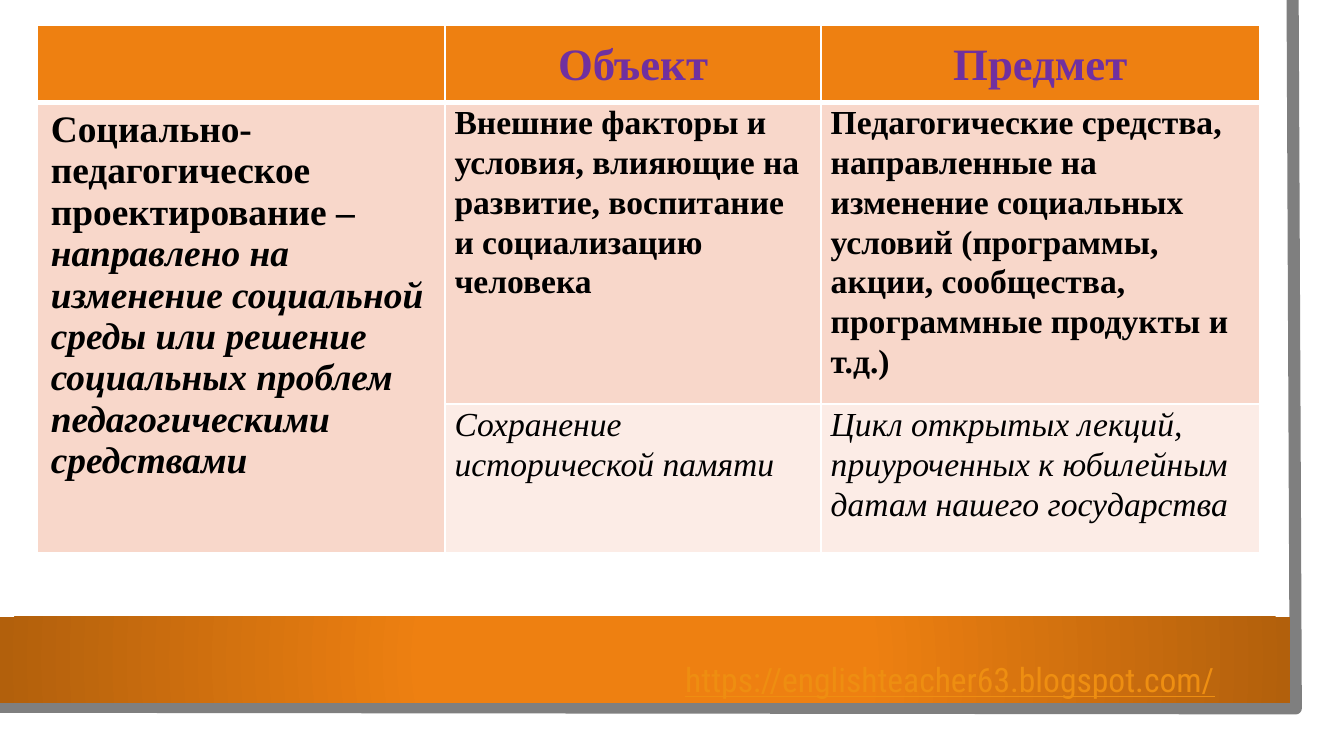
import pptx
import pptx.dml.color
import pptx.enum.text
import pptx.oxml
import pptx.oxml.ns
import pptx.util
from pptx.util import Cm

SERIF = "Times New Roman"
ORANGE, PINK, CREAM = "EE8011", "F8D7CA", "FCECE6"
HEADINGS = ["", "Объект", "Предмет"]
DEFINITION = [
    ("Социально-педагогическое проектирование – ", False),
    ("направлено на изменение социальной среды или решение социальных "
     "проблем педагогическими средствами", True),
]
GENERAL = [
    "Внешние факторы и условия, влияющие на развитие, воспитание и социализацию человека",
    "Педагогические средства, направленные на изменение социальных условий "
    "(программы, акции, сообщества, программные продукты и т.д.)",
]
EXAMPLES = [
    "Сохранение исторической памяти",
    "Цикл открытых лекций, приуроченных к юбилейным датам нашего государства",
]


def color(value):
    return pptx.dml.color.RGBColor.from_string(value)


def style(run, size, name, tint, bold=False, italic=False):
    run.font.size = pptx.util.Pt(size)
    run.font.name = name
    run.font.color.rgb = color(tint)
    run.font.bold = bold
    run.font.italic = italic


def set_margins(holder, side, end):
    holder.margin_left = holder.margin_right = Cm(side)
    holder.margin_top = holder.margin_bottom = Cm(end)


def add_frame_edge(slide):
    builder = slide.shapes.build_freeform(Cm(24.43), Cm(0))
    builder.add_line_segments([(Cm(24.49), Cm(13.39)), (Cm(-0.05), Cm(13.36))], close=False)
    edge = builder.convert_to_shape()
    edge.shadow.inherit = False
    edge.fill.background()
    edge.line.color.rgb = color("7F7F7F")
    edge.line.width = pptx.util.Pt(6.5)


def add_band(slide):
    band = slide.shapes.add_shape(1, Cm(0), Cm(11.66), Cm(24.38), Cm(1.63))
    band.shadow.inherit = False
    band.line.fill.background()
    band.fill.solid()
    stops = "".join(
        f'<a:gs pos="{place * 1000}"><a:srgbClr val="{tint}"/></a:gs>'
        for place, tint in [(0, ORANGE), (34, ORANGE), (100, "B2600C")])
    gradient = pptx.oxml.parse_xml(
        f'<a:gradFill {pptx.oxml.ns.nsdecls("a")}><a:gsLst>{stops}</a:gsLst>'
        '<a:path path="circle"><a:fillToRect l="50000" t="50000" r="50000" b="50000"/>'
        '</a:path></a:gradFill>')
    properties = band.fill._xPr
    properties.replace(properties.find(pptx.oxml.ns.qn("a:solidFill")), gradient)


def add_address(slide):
    address = slide.shapes.add_textbox(Cm(12.7), Cm(12.34), Cm(11.07), Cm(1.02)).text_frame
    address.word_wrap = True
    address.text = "https://englishteacher63.blogspot.com/"
    run = address.paragraphs[0].runs[0]
    style(run, 18, "Roboto Condensed", "EE8E11")
    run.font.underline = True


def set_borders(cell, top, bottom):
    properties = cell._tc.get_or_add_tcPr()
    widths = [("L", 1), ("R", 1), ("T", top), ("B", bottom)]
    for index, (side, width) in enumerate(widths):
        properties.insert(index, pptx.oxml.parse_xml(
            f'<a:ln{side} {pptx.oxml.ns.nsdecls("a")} w="{pptx.util.Pt(width)}">'
            f'<a:solidFill><a:srgbClr val="FFFFFF"/></a:solidFill></a:ln{side}>'))


def fill_cell(cell, text, size, tint, bold=False, italic=False):
    set_margins(cell, 0.18, 0)
    cell.text = text
    paragraph = cell.text_frame.paragraphs[0]
    paragraph.line_spacing = 1.07
    for run in paragraph.runs:
        style(run, size, SERIF, tint, bold, italic)
    return paragraph


def add_definition(cell):
    set_margins(cell, 0.25, 0.13)
    paragraph = cell.text_frame.paragraphs[0]
    for text, italic in DEFINITION:
        run = paragraph.add_run()
        run.text = text
        style(run, 20, SERIF, "000000", bold=True, italic=italic)


def add_comparison(slide):
    widths, heights = [7.7, 7.11, 8.28], [1.45, 5.23, 2.82]
    table = slide.shapes.add_table(
        3, 3, Cm(0.71), Cm(0.48), Cm(sum(widths)), Cm(sum(heights))).table
    for column, width in zip(table.columns, widths):
        column.width = Cm(width)
    for row, height in zip(table.rows, heights):
        row.height = Cm(height)

    for index, heading in enumerate(HEADINGS):
        cell = table.cell(0, index)
        paragraph = fill_cell(cell, heading, 24, "7030A0", bold=True)
        paragraph.alignment = pptx.enum.text.PP_ALIGN.CENTER
        cell.vertical_anchor = pptx.enum.text.MSO_ANCHOR.MIDDLE
    for index, (general, example) in enumerate(zip(GENERAL, EXAMPLES), 1):
        fill_cell(table.cell(1, index), general, 18, "000000", bold=True)
        fill_cell(table.cell(2, index), example, 18, "000000", italic=True)
    table.cell(1, 0).merge(table.cell(2, 0))
    add_definition(table.cell(1, 0))

    for row, (tint, top, bottom) in enumerate([(ORANGE, 1, 3), (PINK, 3, 1), (CREAM, 1, 1)]):
        for column in range(3):
            cell = table.cell(row, column)
            cell.fill.solid()
            cell.fill.fore_color.rgb = color(tint)
            set_borders(cell, top, bottom)


def main():
    deck = pptx.Presentation()
    deck.slide_width, deck.slide_height = Cm(25.4), Cm(14.29)
    slide = deck.slides.add_slide(deck.slide_layouts[6])
    add_frame_edge(slide)
    add_band(slide)
    add_address(slide)
    add_comparison(slide)
    deck.save("out.pptx")


if __name__ == "__main__":
    main()
